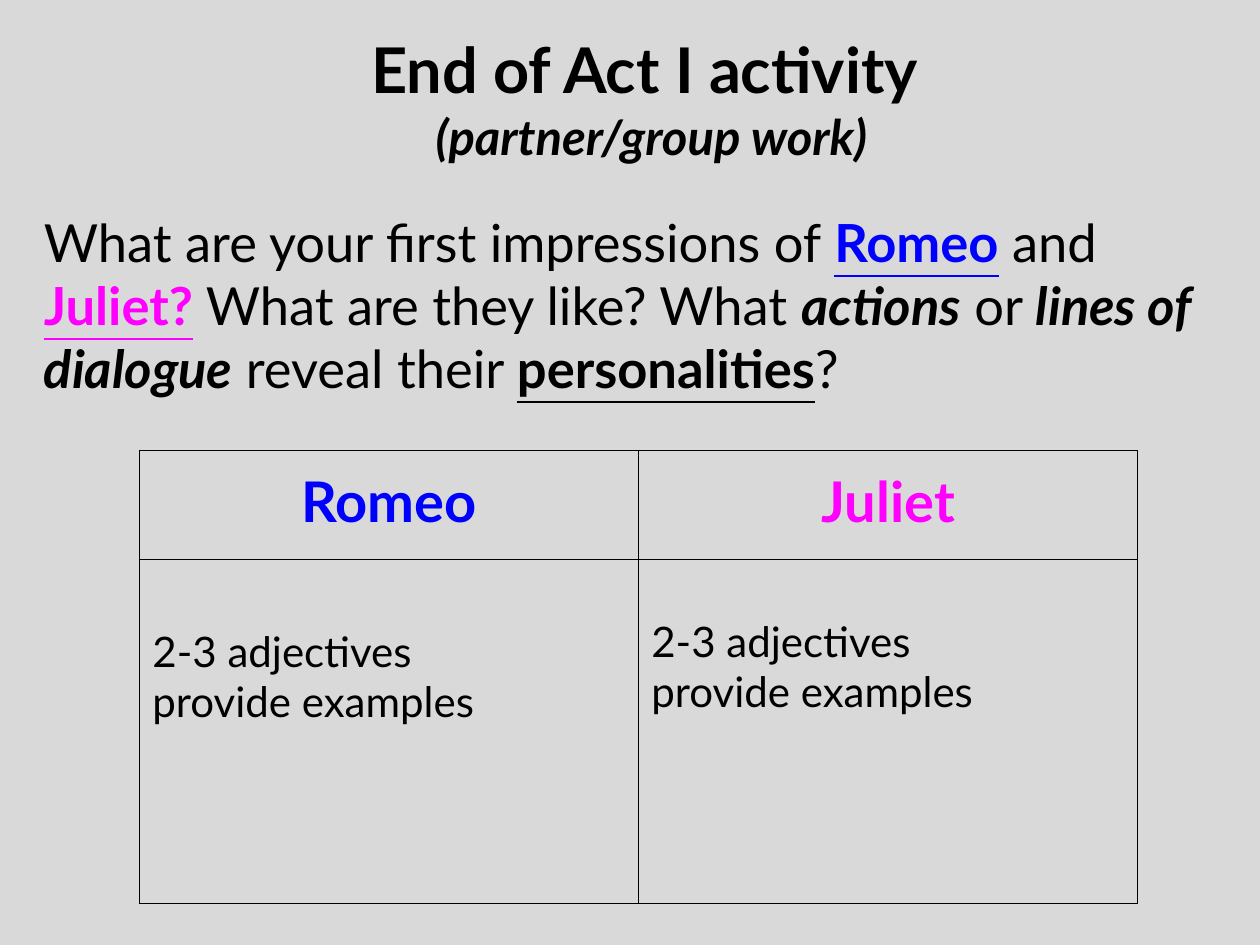
from dataclasses import dataclass

from lxml import etree
from pptx import Presentation
from pptx.dml.color import RGBColor
from pptx.enum.text import MSO_ANCHOR, PP_ALIGN
from pptx.oxml.ns import qn
from pptx.util import Inches, Pt

TOP, BOTTOM = MSO_ANCHOR.TOP, MSO_ANCHOR.BOTTOM
LEFT, CENTER = PP_ALIGN.LEFT, PP_ALIGN.CENTER
PAGE_WIDTH, PAGE_HEIGHT = Inches(10), Inches(7.5)
BLANK_LAYOUT = 6


@dataclass(frozen=True)
class Theme:
    font: str = "Lato"
    background: str = "D9D9D9"
    ink: str = "000000"
    romeo: str = "0000FF"
    juliet: str = "FF00FF"
    title: int = 36
    subtitle: int = 28
    question: int = 30
    header: int = 32
    task: int = 24
    border: float = 0.75


THEME = Theme()


@dataclass(frozen=True)
class Span:
    text: str
    size: int
    color: str = THEME.ink
    bold: bool = False
    italic: bool = False
    underline: bool = False
    break_after: bool = False


@dataclass(frozen=True)
class Area:
    """A rectangle given as shares of the page's width and height."""
    left: float
    top: float
    width: float
    height: float

    def lengths(self) -> tuple[int, int, int, int]:
        return (int(self.left * PAGE_WIDTH), int(self.top * PAGE_HEIGHT),
                int(self.width * PAGE_WIDTH), int(self.height * PAGE_HEIGHT))


@dataclass(frozen=True)
class Column:
    name: str
    color: str
    task_top: float  # inches from the cell's top edge to its first line


TITLE_AREA = Area(0.017, 0.081, 1, 0.107)
QUESTION_AREA = Area(0.025, 0.209, 0.95, 0.813)
TABLE_AREA = Area(0.111, 0.477, 0.792, 0.479)
HEADER_SHARE = 0.24

TITLE = [
    Span("End of Act I activity ", THEME.title, bold=True, break_after=True),
    Span("(partner/group work)", THEME.subtitle, bold=True, italic=True),
]
QUESTION = [
    Span("What are your first impressions of ", THEME.question),
    Span("Romeo", THEME.question, THEME.romeo, bold=True, underline=True),
    Span(" and ", THEME.question),
    Span("Juliet?", THEME.question, THEME.juliet, bold=True, underline=True),
    Span(" What are they like? What ", THEME.question),
    Span("actions", THEME.question, bold=True, italic=True),
    Span(" or ", THEME.question),
    Span("lines of dialogue", THEME.question, bold=True, italic=True),
    Span(" reveal their ", THEME.question),
    Span("personalities", THEME.question, bold=True, underline=True),
    Span("?", THEME.question),
]
COLUMNS = [
    Column("Romeo", THEME.romeo, 0.53),
    Column("Juliet", THEME.juliet, 0.45),
]
TASKS = [[Span(text, THEME.task)] for text in ("2-3 adjectives", "provide examples")]


def write(frame, paragraphs: list[list[Span]], align) -> None:
    for index, spans in enumerate(paragraphs):
        para = frame.add_paragraph() if index else frame.paragraphs[0]
        para.alignment = align
        for span in spans:
            run = para.add_run()
            run.text = span.text
            formats = {"name": THEME.font, "size": Pt(span.size), "bold": span.bold,
                       "italic": span.italic, "underline": span.underline}
            for key, value in formats.items():
                setattr(run.font, key, value)
            run.font.color.rgb = RGBColor.from_string(span.color)
            if span.break_after:
                para.add_line_break()


def add_text(page, area: Area, spans: list[Span], align, anchor) -> None:
    frame = page.shapes.add_textbox(*area.lengths()).text_frame
    formats = {"word_wrap": True, "vertical_anchor": anchor}
    formats |= {f"margin_{side}": Inches(0.1) for side in ("left", "top", "right", "bottom")}
    for key, value in formats.items():
        setattr(frame, key, value)
    write(frame, [spans], align)


def add_borders(cell) -> None:
    properties = cell._tc.get_or_add_tcPr()
    for index, side in enumerate("LRTB"):
        line = etree.Element(qn(f"a:ln{side}"), w=str(Pt(THEME.border)))
        fill = etree.SubElement(line, qn("a:solidFill"))
        etree.SubElement(fill, qn("a:srgbClr"), val=THEME.ink)
        properties.insert(index, line)


def fill_cell(cell, paragraphs: list[list[Span]], align, top: float = 0.13) -> None:
    formats = {"margin_left": Inches(0.1), "margin_right": Inches(0.1),
               "margin_top": Inches(top), "margin_bottom": Inches(0.13),
               "vertical_anchor": TOP}
    for key, value in formats.items():
        setattr(cell, key, value)
    cell.fill.background()
    add_borders(cell)
    write(cell.text_frame, paragraphs, align)


def add_character_table(page, area: Area, columns: list[Column]) -> None:
    table = page.shapes.add_table(2, len(columns), *area.lengths()).table
    table.first_row = table.horz_banding = False
    height = area.lengths()[3]
    for row, share in zip(table.rows, (HEADER_SHARE, 1 - HEADER_SHARE)):
        row.height = int(height * share)
    for index, column in enumerate(columns):
        heading = Span(column.name, THEME.header, column.color, bold=True)
        fill_cell(table.cell(0, index), [[heading]], CENTER)
        fill_cell(table.cell(1, index), TASKS, LEFT, column.task_top)


def main() -> None:
    deck = Presentation()
    deck.slide_width, deck.slide_height = PAGE_WIDTH, PAGE_HEIGHT
    page = deck.slides.add_slide(deck.slide_layouts[BLANK_LAYOUT])
    page.background.fill.solid()
    page.background.fill.fore_color.rgb = RGBColor.from_string(THEME.background)
    add_text(page, TITLE_AREA, TITLE, CENTER, BOTTOM)
    add_text(page, QUESTION_AREA, QUESTION, LEFT, TOP)
    add_character_table(page, TABLE_AREA, COLUMNS)
    deck.save("out.pptx")


if __name__ == "__main__":
    main()
